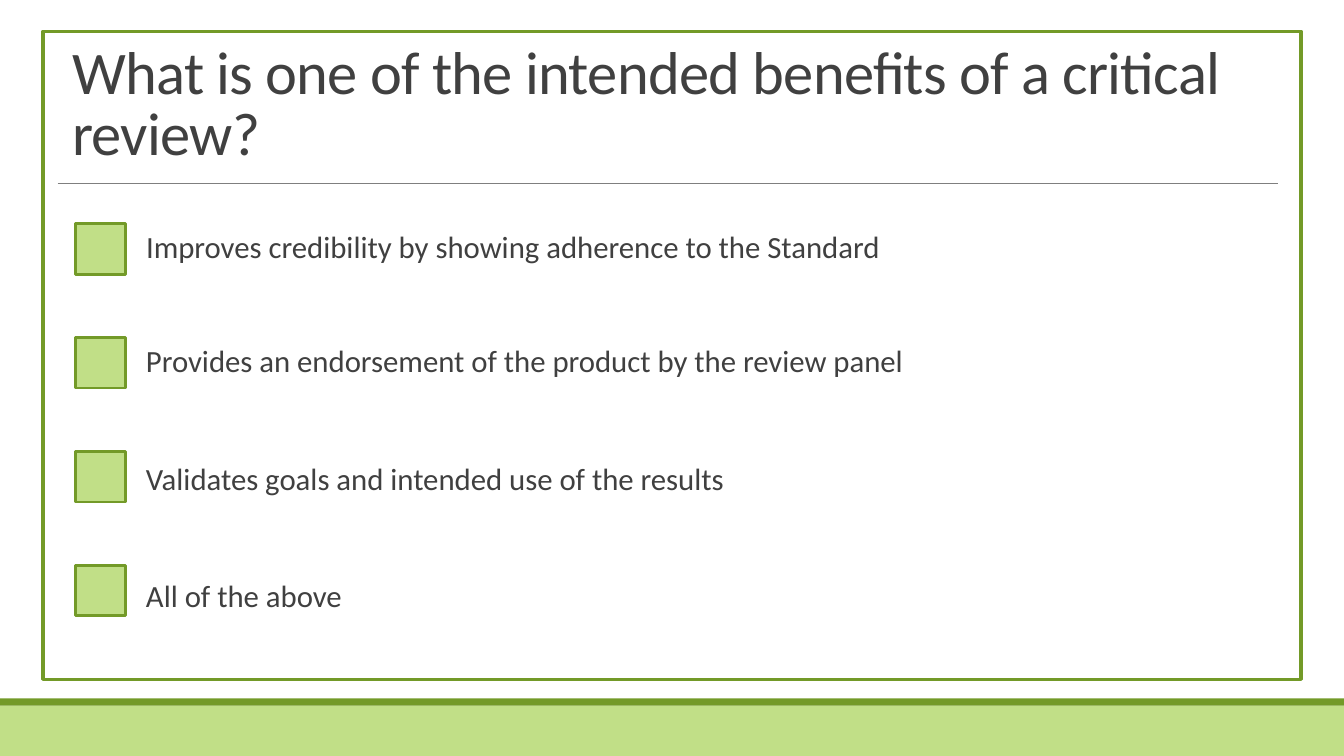
import pptx
import pptx.dml.color
import pptx.enum.shapes
import pptx.enum.text
import pptx.oxml
import pptx.util
from pptx.oxml.ns import qn

Cm = pptx.util.Cm
Pt = pptx.util.Pt
RGBColor = pptx.dml.color.RGBColor
Anchor = pptx.enum.text.MSO_ANCHOR

QUESTION = "What is one of the intended benefits of a critical review?"
# Answer and the top of its text, in centimetres
ANSWERS = [
    ("Improves credibility by showing adherence to the Standard", 5.72),
    ("Provides an endorsement of the product by the review panel", 8.59),
    ("Validates goals and intended use of the results", 11.56),
    ("All of the above", 14.5),
]

LIGHT_GREEN = RGBColor(0xC1, 0xDF, 0x87)
DARK_GREEN = RGBColor(0x73, 0x9A, 0x28)
TEXT_GREY = RGBColor(0x40, 0x40, 0x40)
RULE_GREY = RGBColor(0x7F, 0x7F, 0x7F)

PAGE_WIDTH, PAGE_HEIGHT = 33.87, 19.05
FOOTER_TOP, STRIPE_HEIGHT = 17.78, 0.18
CHECKBOX_LEFT, CHECKBOX_TOP, CHECKBOX_SIZE, CHECKBOX_PITCH = 1.9, 5.64, 1.27, 2.87
ANSWER_LEFT, ANSWER_WIDTH, ANSWER_HEIGHT = 3.68, 27.48, 1.27

TITLE_FORMAT = {"line_spacing": 0.85}
ANSWER_FORMAT = {"line_spacing": 0.9, "space_before": Pt(0), "space_after": Pt(2)}


def apply_format(target, values):
    for name, value in values.items():
        setattr(target, name, value)


def add_rectangle(page, area, fill=None, line=None, line_width=0):
    """Draw a rectangle; area is left, top, width and height in centimetres."""
    shape = page.shapes.add_shape(
        pptx.enum.shapes.MSO_SHAPE.RECTANGLE, *map(Cm, area))
    shape.shadow.inherit = False
    if fill is None:
        shape.fill.background()
    else:
        shape.fill.solid()
        shape.fill.fore_color.rgb = fill
    if line is None:
        shape.line.fill.background()
    else:
        shape.line.color.rgb = line
        shape.line.width = Pt(line_width)


def write_text(box, text, area, size, anchor, side_margin, paragraph_format):
    """Place a box and fill it with one left-aligned, unbulleted paragraph."""
    apply_format(box, dict(zip(("left", "top", "width", "height"), map(Cm, area))))
    frame = box.text_frame
    apply_format(frame, {
        "word_wrap": True,
        "auto_size": pptx.enum.text.MSO_AUTO_SIZE.NONE,
        "vertical_anchor": anchor,
        "margin_left": Cm(side_margin), "margin_right": Cm(side_margin),
        "margin_top": Cm(0.13), "margin_bottom": Cm(0.13),
    })
    para = frame.paragraphs[0]
    apply_format(para, paragraph_format)
    para.alignment = pptx.enum.text.PP_ALIGN.LEFT
    properties = para._p.get_or_add_pPr()
    properties.set("marL", "0")
    properties.set("indent", "0")
    properties.append(pptx.oxml.xmlchemy.OxmlElement("a:buNone"))
    span = para.add_run()
    span.text = text
    apply_format(span.font, {"name": "Calibri", "size": Pt(size)})
    span.font.color.rgb = TEXT_GREY
    return span


def main():
    deck = pptx.Presentation()
    deck.slide_width, deck.slide_height = Cm(PAGE_WIDTH), Cm(PAGE_HEIGHT)
    page = deck.slides.add_slide(deck.slide_layouts[1])

    add_rectangle(page, (0, FOOTER_TOP, PAGE_WIDTH, PAGE_HEIGHT - FOOTER_TOP), LIGHT_GREEN)
    add_rectangle(page, (0, FOOTER_TOP - STRIPE_HEIGHT, PAGE_WIDTH, STRIPE_HEIGHT), DARK_GREEN)
    add_rectangle(page, (1.09, 0.79, 31.7, 16.33), line=DARK_GREEN, line_width=2.5)

    title = write_text(page.shapes.title, QUESTION, (1.57, 1.09, 31.04, 3.28),
                       43.2, Anchor.BOTTOM, 0.25, TITLE_FORMAT)
    title._r.get_or_add_rPr().set("spc", "-50")

    rule = page.shapes.add_connector(
        pptx.enum.shapes.MSO_CONNECTOR.STRAIGHT, Cm(1.45), Cm(4.62), Cm(32.21), Cm(4.62))
    rule.line.color.rgb = RULE_GREY
    rule.line.width = Pt(0.75)
    rule._element.spPr.append(pptx.oxml.xmlchemy.OxmlElement("a:effectLst"))

    for row, (answer, top) in enumerate(ANSWERS):
        add_rectangle(page, (CHECKBOX_LEFT, CHECKBOX_TOP + row * CHECKBOX_PITCH,
                             CHECKBOX_SIZE, CHECKBOX_SIZE), LIGHT_GREEN, DARK_GREEN, 2)
        box = page.placeholders[1] if row == 0 else page.shapes.add_textbox(0, 0, 0, 0)
        write_text(box, answer, (ANSWER_LEFT, top, ANSWER_WIDTH, ANSWER_HEIGHT),
                   22, Anchor.TOP, 0, ANSWER_FORMAT)

    deck.save("out.pptx")


if __name__ == "__main__":
    main()
